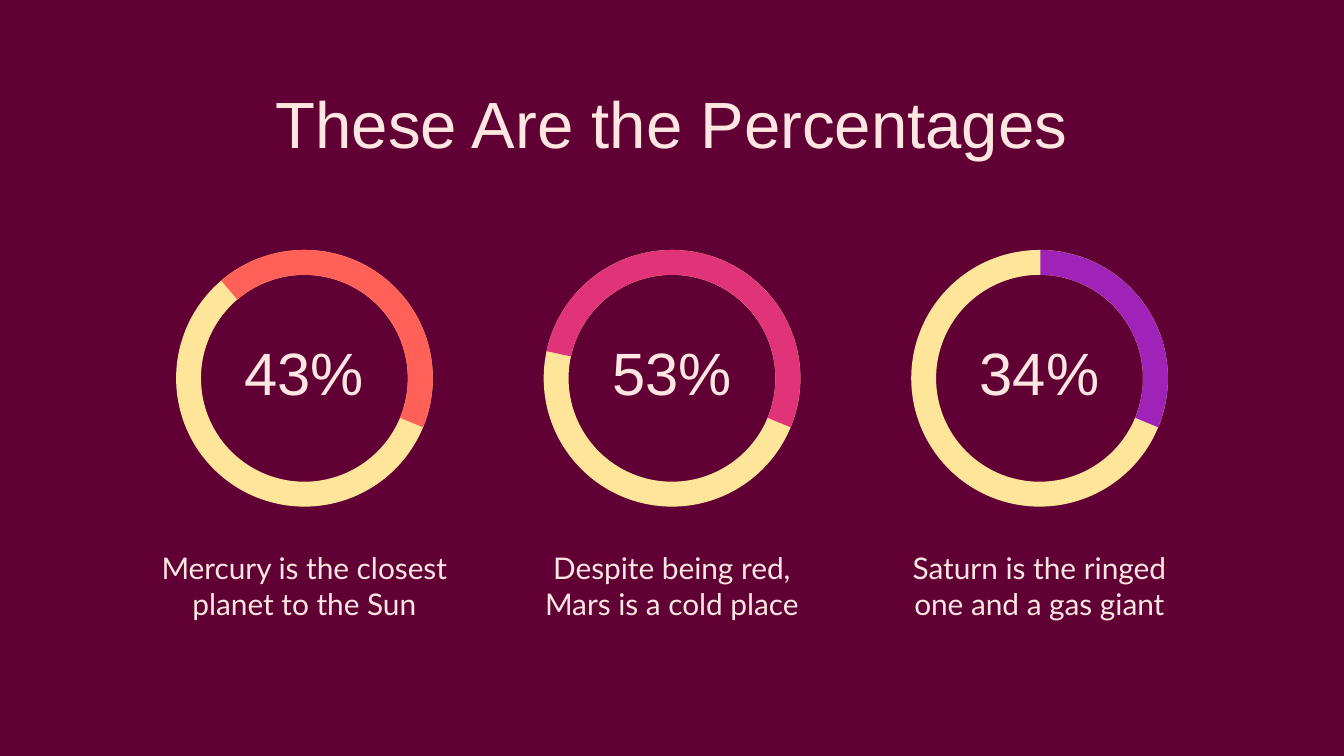
from typing import NamedTuple

from pptx import Presentation
from pptx.dml.color import RGBColor
from pptx.enum import shapes, text
from pptx.oxml import ns, xmlchemy
from pptx.util import Pt

COLORS = {
    "background": "610035",
    "text": "FFE6E0",
    "track": "FFE599",
    "mercury": "FF6159",
    "mars": "E03378",
    "saturn": "9F23B8",
}
CENTER_X, PITCH = 360, 196.9
RING_TOP, RING_SIZE, RING_THICKNESS = 133.9, 137.5, 0.097
ARC_END = 22.44  # degrees, clockwise from three o'clock
ADJUST_PER_DEGREE = 60000 / 100000


class Planet(NamedTuple):
    percentage: str
    caption: str
    color: str
    arc_start: float
    placeholder: int


PLANETS = [
    Planet("43%", "Mercury is the closest planet to the Sun", "mercury", 229.56, 1),
    Planet("53%", "Despite being red, Mars is a cold place", "mars", 192.22, 2),
    Planet("34%", "Saturn is the ringed one and a gas giant", "saturn", 270.42, 3),
]


def rgb(name: str) -> RGBColor:
    return RGBColor.from_string(COLORS[name])


def place(shape, center: float, top: float, width: float, height: float) -> None:
    shape.left, shape.top = Pt(center - width / 2), Pt(top)
    shape.width, shape.height = Pt(width), Pt(height)


def write(shape, words: str, *, size: float, font: str = "Arial",
          spacing: float = 1.0, anchor=text.MSO_ANCHOR.TOP) -> None:
    frame = shape.text_frame
    frame.word_wrap = True
    frame.auto_size = text.MSO_AUTO_SIZE.NONE
    frame.vertical_anchor = anchor
    frame.margin_left = frame.margin_right = Pt(7.2)
    frame.margin_top = frame.margin_bottom = Pt(7.2)
    paragraph = frame.paragraphs[0]
    paragraph.alignment = text.PP_ALIGN.CENTER
    paragraph.line_spacing = spacing
    paragraph.space_before = Pt(0)
    # No bullet and no hanging indent
    properties = paragraph._p.get_or_add_pPr()
    properties.set("marL", "0")
    properties.set("indent", "0")
    properties.append(xmlchemy.OxmlElement("a:buNone"))
    run = paragraph.add_run()
    run.text = words
    run.font.name, run.font.size, run.font.bold = font, Pt(size), False
    run.font.color.rgb = rgb("text")


def add_ring(slide, kind, center: float, color: str, adjustments: list[float]) -> None:
    ring = slide.shapes.add_shape(kind, 0, 0, 0, 0)
    place(ring, center, RING_TOP, RING_SIZE, RING_SIZE)
    for index, value in enumerate(adjustments):
        ring.adjustments[index] = value
    ring.shadow.inherit = False
    ring.fill.solid()
    ring.fill.fore_color.rgb = rgb(color)
    ring.line.fill.background()


def add_planet(slide, planet: Planet, center: float) -> None:
    caption = slide.placeholders[planet.placeholder]
    place(caption, center, 287.3, 178, 65)
    write(caption, planet.caption, size=16, font="Lato")

    percentage = slide.shapes.add_textbox(0, 0, 0, 0)
    place(percentage, center, 157.7, 155, 78.5)
    write(percentage, planet.percentage, size=32, spacing=1.1,
          anchor=text.MSO_ANCHOR.MIDDLE)

    # Full track with the coloured share on top
    kinds = shapes.MSO_SHAPE
    add_ring(slide, kinds.DONUT, center, "track", [RING_THICKNESS])
    add_ring(slide, kinds.BLOCK_ARC, center, planet.color,
             [planet.arc_start * ADJUST_PER_DEGREE,
              ARC_END * ADJUST_PER_DEGREE, RING_THICKNESS])


def main() -> None:
    deck = Presentation()
    deck.slide_width, deck.slide_height = Pt(720), Pt(405)
    # The comparison layout has a title and four content placeholders
    slide = deck.slides.add_slide(deck.slide_layouts[4])
    slide.background.fill.solid()
    slide.background.fill.fore_color.rgb = rgb("background")

    # Title
    title = slide.shapes.title
    place(title, CENTER_X, 33.1, 671, 45.4)
    write(title, "These Are the Percentages", size=35, spacing=1.1)

    # Three planets, centred on the slide
    for column, planet in enumerate(PLANETS):
        add_planet(slide, planet, CENTER_X + (column - 1) * PITCH)

    # Unused fourth placeholder
    spare = slide.placeholders[4].element
    spare.getparent().remove(spare)
    deck.save("out.pptx")


if __name__ == "__main__":
    main()
